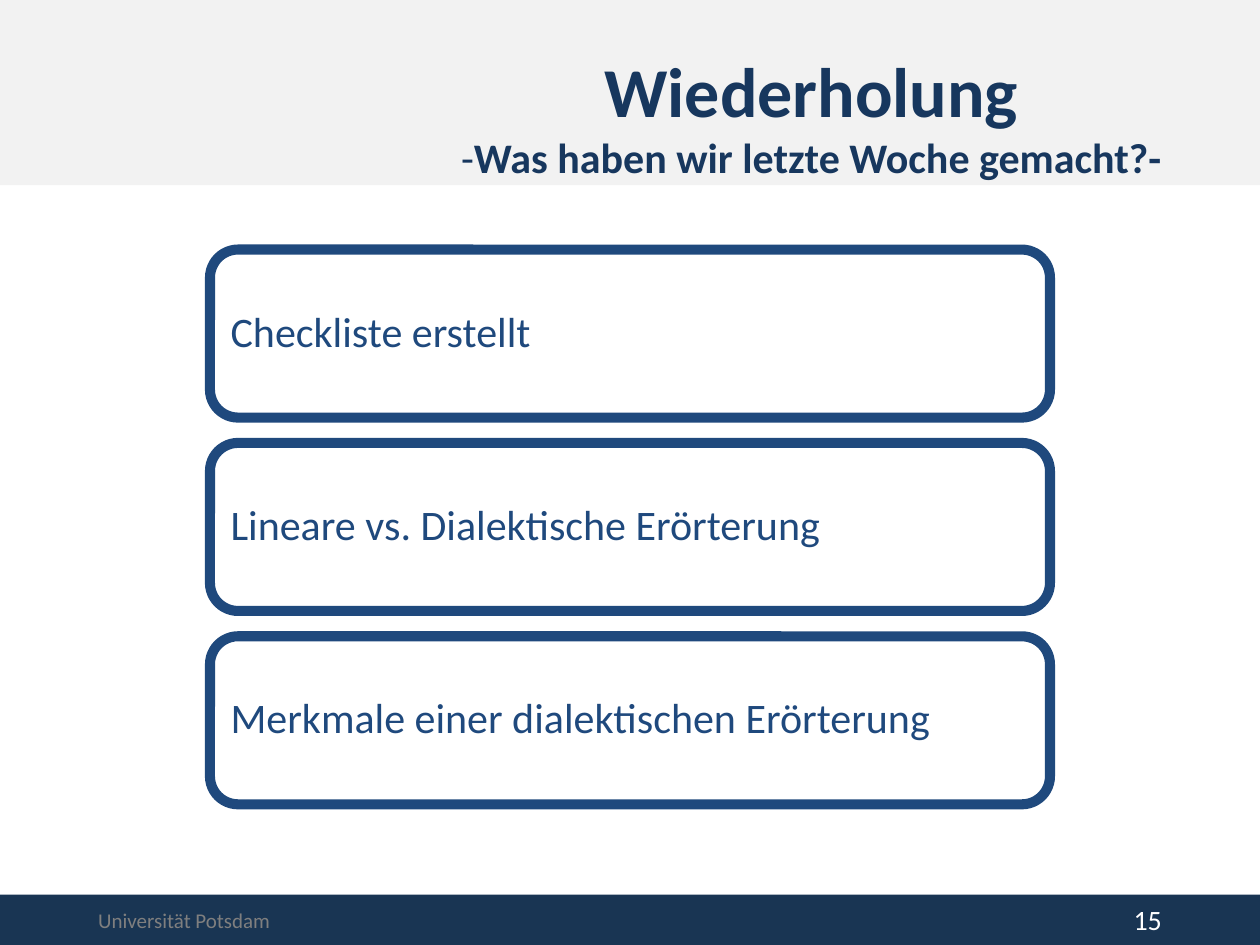
from pptx import Presentation
from pptx.dml.color import RGBColor
from pptx.enum.shapes import MSO_SHAPE
from pptx.enum.text import MSO_ANCHOR, MSO_AUTO_SIZE, PP_ALIGN
from pptx.util import Pt

COLORS = {
    "header": "F2F2F2",
    "footer": "193553",
    "title": "17375E",
    "topic": "1F497D",
    "university": "7F7F7F",
    "number": "FFFFFF",
}
WIDTH, HEIGHT = 720, 540
FOOTER_TOP, FOOTER_HEIGHT = 511.2, 28.8
TOPICS = [
    "Checkliste erstellt",
    "Lineare vs. Dialektische Erörterung",
    "Merkmale einer dialektischen Erörterung",
]
TOPIC_TOP, TOPIC_HEIGHT, TOPIC_GAP = 142.6, 96, 14.5


def color(key):
    return RGBColor.from_string(COLORS[key])


class SlideBuilder:
    """Holds the current slide and the shared text style."""

    font = "Calibri"

    def __init__(self, slide):
        self.slide = slide

    def format_frame(self, frame, side=7.2, edge=7.2, anchor=MSO_ANCHOR.MIDDLE):
        settings = {
            "word_wrap": True,
            "auto_size": MSO_AUTO_SIZE.NONE,
            "vertical_anchor": anchor,
            "margin_left": Pt(side),
            "margin_right": Pt(side),
            "margin_top": Pt(edge),
            "margin_bottom": Pt(edge),
        }
        for name, value in settings.items():
            setattr(frame, name, value)

    def add_text(self, paragraph, text, size, color_key, bold=False, align=PP_ALIGN.LEFT):
        """Add a styled run to the paragraph."""
        paragraph.alignment = align
        run = paragraph.add_run()
        run.text = text
        settings = {"name": self.font, "size": Pt(size), "bold": bold}
        for name, value in settings.items():
            setattr(run.font, name, value)
        run.font.color.rgb = color(color_key)

    def band(self, top, height, color_key):
        band = self.slide.shapes.add_shape(
            MSO_SHAPE.RECTANGLE, 0, Pt(top), Pt(WIDTH), Pt(height))
        band.shadow.inherit = False
        band.fill.solid()
        band.fill.fore_color.rgb = color(color_key)
        band.line.fill.background()

    def title(self, heading, dash, question):
        title = self.slide.shapes.title
        box = {"left": 221, "top": 20.2, "width": 485.3, "height": 92.2}
        for name, value in box.items():
            setattr(title, name, Pt(value))
        # The title must lie above the header band
        title.element.getparent().append(title.element)
        frame = title.text_frame
        self.format_frame(frame, anchor=MSO_ANCHOR.TOP)
        center = PP_ALIGN.CENTER
        self.add_text(frame.paragraphs[0], heading, 40, "title", True, center)
        subtitle = frame.add_paragraph()
        self.add_text(subtitle, dash, 24, "title", False, center)
        self.add_text(subtitle, question, 24, "title", True, center)
        for paragraph in frame.paragraphs:
            paragraph.space_before = Pt(0)

    def footer_text(self, left, width, text, size, color_key, align=PP_ALIGN.LEFT):
        label = self.slide.shapes.add_textbox(
            Pt(left), Pt(FOOTER_TOP), Pt(width), Pt(FOOTER_HEIGHT))
        self.format_frame(label.text_frame, edge=3.6)
        self.add_text(label.text_frame.paragraphs[0], text, size, color_key, align=align)

    def topic(self, top, text):
        topic = self.slide.shapes.add_shape(
            MSO_SHAPE.ROUNDED_RECTANGLE, Pt(120), Pt(top), Pt(480), Pt(TOPIC_HEIGHT))
        topic.shadow.inherit = False
        topic.fill.background()
        topic.line.color.rgb = color("topic")
        topic.line.width = Pt(5.75)
        self.format_frame(topic.text_frame)
        paragraph = topic.text_frame.paragraphs[0]
        paragraph.line_spacing = 0.9
        self.add_text(paragraph, text, 24, "topic")


def main():
    presentation = Presentation()
    presentation.slide_width, presentation.slide_height = Pt(WIDTH), Pt(HEIGHT)
    layout = presentation.slide_layouts.get_by_name("Title Only")
    builder = SlideBuilder(presentation.slides.add_slide(layout))

    builder.band(0, 105.8, "header")
    builder.band(FOOTER_TOP, FOOTER_HEIGHT, "footer")
    builder.footer_text(49, 317.5, "Universität Potsdam", 12, "university")
    builder.footer_text(509, 162, "15", 16, "number", PP_ALIGN.RIGHT)
    builder.title("Wiederholung", "-", "Was haben wir letzte Woche gemacht?-")
    for index, text in enumerate(TOPICS):
        builder.topic(TOPIC_TOP + index * (TOPIC_HEIGHT + TOPIC_GAP), text)

    presentation.save("out.pptx")


if __name__ == "__main__":
    main()
